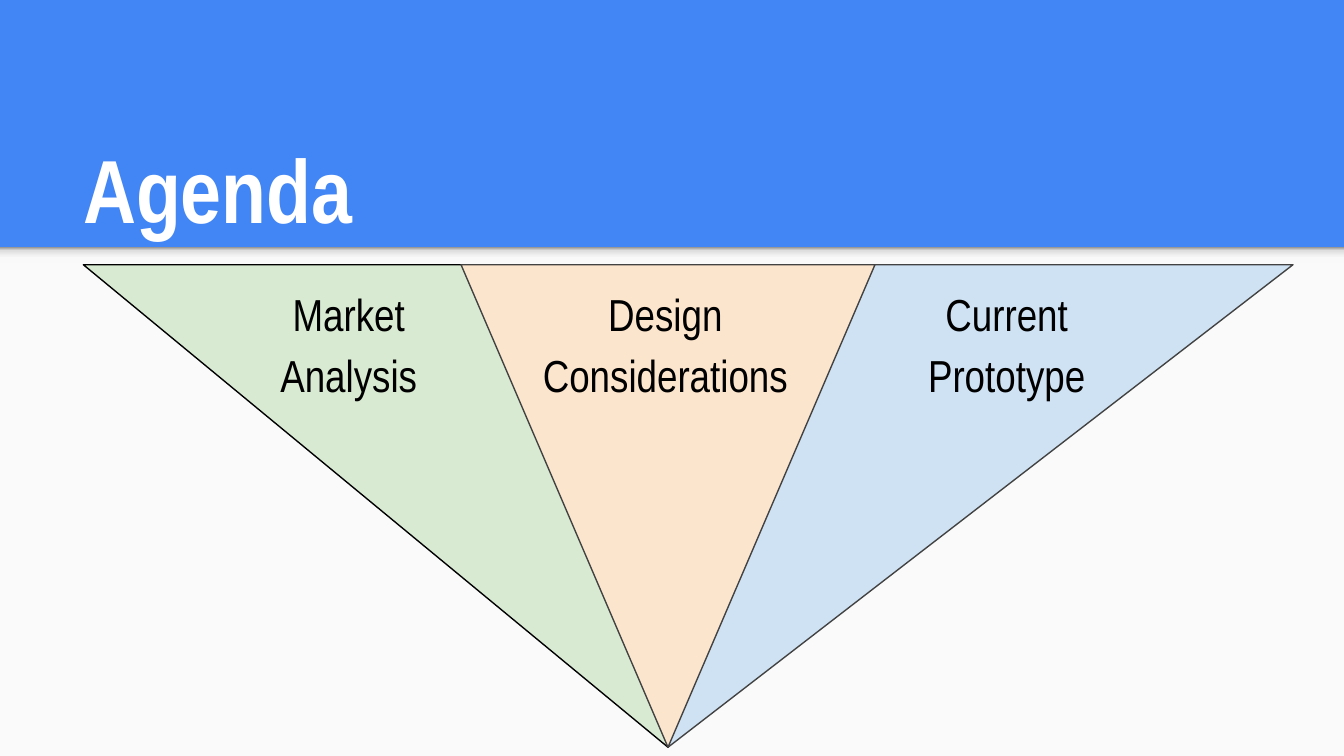
"""Builds an agenda slide with three topics in an inverted triangle."""
from lxml.etree import SubElement
from pptx import Presentation
from pptx.dml.color import RGBColor
from pptx.enum.shapes import MSO_SHAPE
from pptx.enum.text import MSO_ANCHOR, PP_ALIGN
from pptx.oxml.ns import qn
from pptx.util import Inches, Pt

COLORS = {
    "blue": "4285F4", "paper": "FAFAFA", "white": "FFFFFF", "black": "000000",
    "gray": "424242", "green": "D9EAD3", "peach": "FCE5CD", "sky": "CFE2F3",
}
PAGE_WIDTH = 10
PAGE_HEIGHT = PAGE_WIDTH * 9 / 16
HEADER = 1.84
SHADE_STOPS = {0: "F9F9F9", 36: "F9F9F9", 80: "DEDEDE", 100: "999999"}
TOP, HEIGHT = 1.97, 3.59
WEDGES = [
    (MSO_SHAPE.RIGHT_TRIANGLE, 4.97, 4.65, "sky", "gray", True),
    (MSO_SHAPE.RIGHT_TRIANGLE, 0.62, 4.35, "green", "black", False),
    (MSO_SHAPE.ISOSCELES_TRIANGLE, 3.43, 3.08, "peach", "gray", True),
]
TOPICS = [
    ("Market Analysis", 1.71, 1.77, 1),
    ("Design Considerations", 3.84, 2.22, 0.41),
    ("Current Prototype", 6.38, 2.22, 0.41),
]
TITLE_FONT = {"name": "Arial Narrow", "size": Pt(48), "bold": True}
TOPIC_FONT = {"name": "Arial Narrow", "size": Pt(24), "bold": False}
TITLE_PARA = {"alignment": PP_ALIGN.LEFT}
TOPIC_PARA = {"alignment": PP_ALIGN.CENTER, "line_spacing": 1.15, "space_after": Pt(16)}


def color(name):
    """Return the named colour."""
    return RGBColor.from_string(COLORS[name])


def apply(target, values):
    """Set each format value on the target."""
    for name, value in values.items():
        setattr(target, name, value)


def add_preset(page, kind, box, fill):
    """Add a flat preset shape without an outline."""
    shape = page.shapes.add_shape(kind, *map(Inches, box))
    shape.shadow.inherit = False
    shape.fill.solid()
    shape.fill.fore_color.rgb = color(fill)
    shape.line.fill.background()
    return shape


def add_shade(page):
    """Add the soft shade under the header."""
    box = (0, HEADER, PAGE_WIDTH, 0.12)
    shade = add_preset(page, MSO_SHAPE.RECTANGLE, box, "paper")
    shade.fill.gradient()
    shade.fill.gradient_angle = 90
    stops = next(shade.element.iter(qn("a:gsLst")))
    for stop in list(stops):
        stops.remove(stop)
    for percent, value in SHADE_STOPS.items():
        stop = SubElement(stops, qn("a:gs"), pos=str(percent * 1000))
        SubElement(stop, qn("a:srgbClr"), val=value)


def add_wedge(page, kind, left, width, fill, line, flipped):
    """Add one downward wedge of the triangle."""
    wedge = add_preset(page, kind, (left, TOP, width, HEIGHT), fill)
    wedge.rotation = 180
    wedge.line.color.rgb = color(line)
    wedge.line.width = Pt(0.75)
    if flipped:
        wedge.element.spPr.find(qn("a:xfrm")).set("flipH", "1")


def add_text(page, text, box, ink, font, layout, anchor=MSO_ANCHOR.TOP):
    """Add a wrapped text box with one paragraph."""
    frame = page.shapes.add_textbox(*map(Inches, box)).text_frame
    margins = {f"margin_{side}": Inches(0.1) for side in ("left", "top", "right", "bottom")}
    apply(frame, {"word_wrap": True, "vertical_anchor": anchor, **margins})
    para = frame.paragraphs[0]
    apply(para, layout)
    span = para.add_run()
    span.text = text
    apply(span.font, font)
    span.font.color.rgb = color(ink)


def main():
    """Build and save the deck."""
    deck = Presentation()
    apply(deck, {"slide_width": Inches(PAGE_WIDTH), "slide_height": Inches(PAGE_HEIGHT)})
    page = deck.slides.add_slide(deck.slide_layouts[6])
    page.background.fill.solid()
    page.background.fill.fore_color.rgb = color("blue")
    body = (0, HEADER, PAGE_WIDTH, PAGE_HEIGHT - HEADER)
    add_preset(page, MSO_SHAPE.RECTANGLE, body, "paper")
    add_shade(page)
    for wedge in WEDGES:
        add_wedge(page, *wedge)
    for text, left, width, height in TOPICS:
        add_text(page, text, (left, TOP, width, height), "black", TOPIC_FONT, TOPIC_PARA)
    add_text(page, "Agenda", (0.52, 1.06, 8.99, 0.84), "white",
             TITLE_FONT, TITLE_PARA, MSO_ANCHOR.BOTTOM)
    deck.save("out.pptx")


if __name__ == "__main__":
    main()
